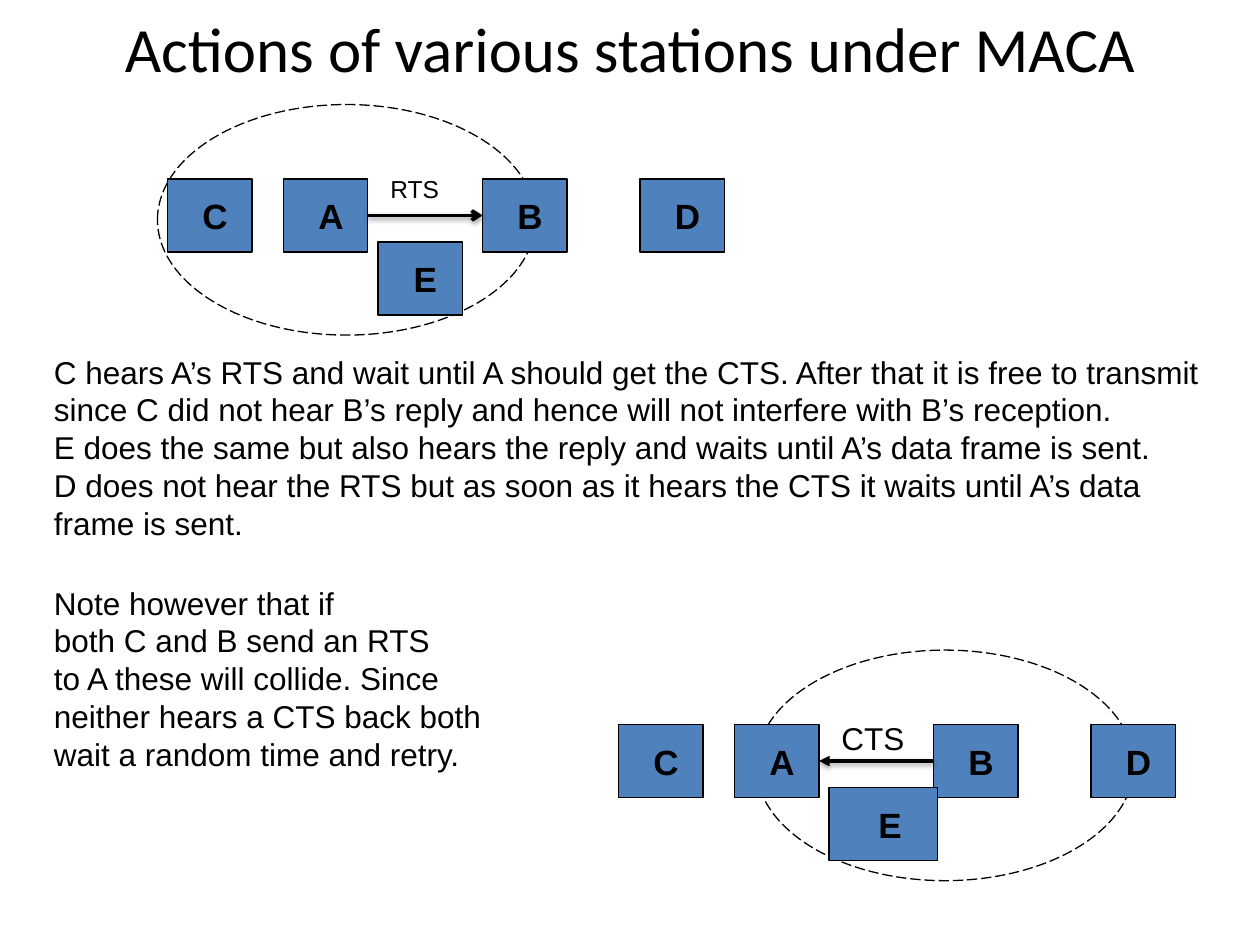
import dataclasses
import lxml.etree
import pptx
import pptx.dml.color
import pptx.enum.dml
import pptx.enum.shapes
import pptx.enum.text
import pptx.oxml.ns
import pptx.util

Inches = pptx.util.Inches
Pt = pptx.util.Pt
RGB = pptx.dml.color.RGBColor
SHAPE = pptx.enum.shapes.MSO_SHAPE
CENTER = pptx.enum.text.PP_ALIGN.CENTER
MIDDLE = pptx.enum.text.MSO_ANCHOR.MIDDLE
qn = pptx.oxml.ns.qn


@dataclasses.dataclass(frozen=True)
class Theme:
    ink: RGB = RGB(0x00, 0x00, 0x00)
    paper: RGB = RGB(0xFF, 0xFF, 0xFF)
    station: RGB = RGB(0x4F, 0x81, 0xBD)
    title_font: str = "Calibri"
    text_font: str = "Arial"
    title_size: int = 36
    station_size: int = 20
    body_size: int = 18
    outline: float = 0.75
    arrow: float = 2


theme = Theme()
deck = pptx.Presentation()
deck.slide_width, deck.slide_height = Inches(10), Inches(7.5)
slide = deck.slides.add_slide(deck.slide_layouts[6])


def add_text(left, top, width, height, lines, size, font=theme.text_font):
    box = slide.shapes.add_textbox(Inches(left), Inches(top), Inches(width), Inches(height))
    frame = box.text_frame
    frame.word_wrap = True
    frame.text = "\n".join(lines)
    for paragraph in frame.paragraphs:
        paragraph.font.name = font
        paragraph.font.size = Pt(size)
        paragraph.font.color.rgb = theme.ink
    return frame


def add_outlined(kind, left, top, width, height, fill):
    shape = slide.shapes.add_shape(kind, Inches(left), Inches(top), Inches(width), Inches(height))
    shape.shadow.inherit = False
    shape.fill.solid()
    shape.fill.fore_color.rgb = fill
    shape.line.color.rgb = theme.ink
    shape.line.width = Pt(theme.outline)
    return shape


title = add_text(0.5, -0.25, 9, 1.25, ["Actions of various stations under MACA"],
                 theme.title_size, theme.title_font)
title.vertical_anchor = MIDDLE
title.paragraphs[0].alignment = CENTER

station_places = {"A": (2.25, 1.42), "B": (3.83, 1.42), "C": (1.33, 1.42),
                  "D": (5.08, 1.42), "E": (3, 1.92)}
exchanges = [
    ("RTS", 14, 0, 0, 1.25, "A", 3, "B", 1, "arrow", 0.67),
    ("CTS", 18, 3.58, 4.33, 6, "B", 1, "A", 3, "triangle", 0.86),
]

for (message, message_size, dx, dy, range_left, sender, sender_side,
     receiver, receiver_side, arrowhead, e_width) in exchanges:
    radio_range = add_outlined(SHAPE.OVAL, range_left, 0.83 + dy, 3, 1.83, theme.paper)
    radio_range.line.dash_style = pptx.enum.dml.MSO_LINE.LONG_DASH

    stations = {}
    for name, (left, top) in station_places.items():
        width = e_width if name == "E" else 0.67
        station = add_outlined(SHAPE.RECTANGLE, left + dx, top + dy, width, 0.58, theme.station)
        frame = station.text_frame
        frame.margin_left, frame.margin_right = Inches(width / 4), Inches(width / 8)
        frame.margin_top = frame.margin_bottom = 0
        frame.vertical_anchor = MIDDLE
        frame.text = name
        letter = frame.paragraphs[0]
        letter.alignment = CENTER
        letter.font.name = theme.text_font
        letter.font.size = Pt(theme.station_size)
        letter.font.bold = True
        letter.font.color.rgb = theme.ink
        stations[name] = station

    signal = slide.shapes.add_connector(pptx.enum.shapes.MSO_CONNECTOR.STRAIGHT, 0, 0, 0, 0)
    signal.begin_connect(stations[sender], sender_side)
    signal.end_connect(stations[receiver], receiver_side)
    signal.line.color.rgb = theme.ink
    signal.line.width = Pt(theme.arrow)
    lxml.etree.SubElement(signal.line._get_or_add_ln(), qn("a:tailEnd"), type=arrowhead)
    effects = lxml.etree.SubElement(signal._element.spPr, qn("a:effectLst"))
    shadow = lxml.etree.SubElement(effects, qn("a:outerShdw"), blurRad="40000",
                                   dist="20000", dir="5400000", rotWithShape="0")
    shade = lxml.etree.SubElement(shadow, qn("a:srgbClr"), val=str(theme.ink))
    lxml.etree.SubElement(shade, qn("a:alpha"), val="38000")

    add_text(3 + dx, 1.33 + dy, 0.75, 0.4, [message], message_size)

explanation = add_text(0.33, 2.75, 9.33, 3.47, [
    "C hears A’s RTS and wait until A should get the CTS. After that it is free to transmit "
    "since C did not hear B’s reply and hence will not interfere with B’s reception.",
    "E does the same but also hears the reply and waits until A’s data frame is sent.",
    "D does not hear the RTS but as soon as it hears the CTS it waits until A’s data frame is sent.",
    "Note however that if",
    "both C and B send an RTS",
    "to A these will collide. Since",
    "neither hears a CTS back both",
    "wait a random time and retry.",
], theme.body_size)
explanation.paragraphs[3].space_before = Pt(24)

deck.save("out.pptx")
